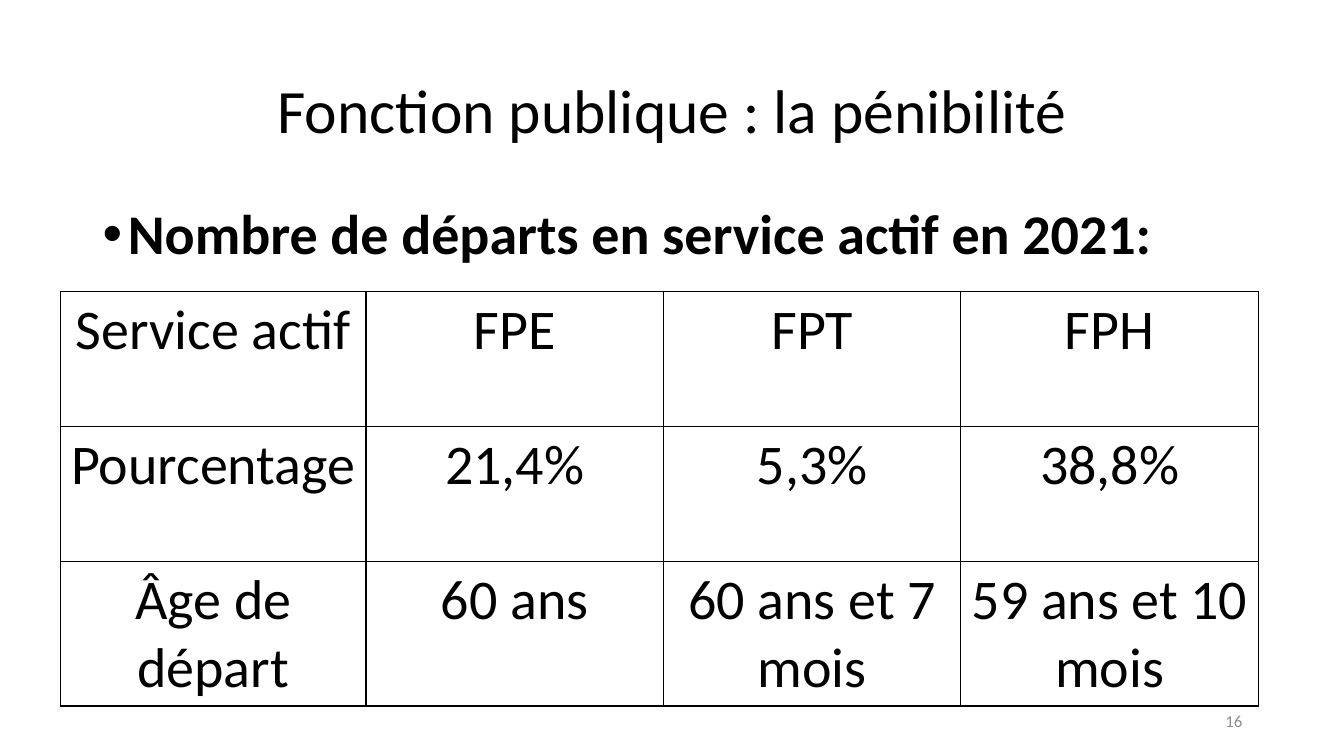
from lxml import etree
from pptx import Presentation, util as u
from pptx.dml import color
from pptx.enum import text as t
from pptx.oxml import ns

ROWS = [
    ["Service actif", "FPE", "FPT", "FPH"],
    ["Pourcentage", "21,4%", "5,3%", "38,8%"],
    ["Âge de départ", "60 ans", "60 ans et 7 mois", "59 ans et 10 mois"],
]
COLS = [3.03, 2.95, 2.95, 2.95]
TALL = 1.34


def tint(code):
    return color.RGBColor.from_string(code)


def write(frame, words, size, align, shade="000000", bold=False, **form):
    frame.word_wrap = True
    para = frame.paragraphs[0]
    for key, value in {"alignment": align, **form}.items():
        setattr(para, key, value)
    run = para.add_run()
    run.text = words
    for key, value in {"name": "Calibri", "size": u.Pt(size), "bold": bold}.items():
        setattr(run.font, key, value)
    run.font.color.rgb = tint(shade)
    return para


def add_box(slide, box, anchor):
    frame = slide.shapes.add_textbox(*map(u.Inches, box)).text_frame
    frame.vertical_anchor = anchor
    return frame


def add_title(slide, box):
    frame = add_box(slide, box, t.MSO_ANCHOR.MIDDLE)
    write(frame, "Fonction publique : la pénibilité", 44, t.PP_ALIGN.CENTER,
          line_spacing=0.9)


def add_point(slide, box):
    frame = add_box(slide, box, t.MSO_ANCHOR.TOP)
    para = write(frame, "Nombre de départs en service actif en 2021:", 40,
                 t.PP_ALIGN.LEFT, bold=True, line_spacing=0.9,
                 space_before=u.Pt(10))
    props = para._p.get_or_add_pPr()
    props.set("marL", str(u.Inches(0.25)))
    props.set("indent", str(-u.Inches(0.25)))
    etree.SubElement(props, ns.qn("a:buFont")).set("typeface", "Arial")
    etree.SubElement(props, ns.qn("a:buChar")).set("char", "•")


def add_edges(cell):
    props = cell._tc.get_or_add_tcPr()
    for spot, side in enumerate(("lnL", "lnR", "lnT", "lnB")):
        line = etree.Element(ns.qn("a:" + side), w=str(u.Pt(1)))
        fill = etree.SubElement(line, ns.qn("a:solidFill"))
        etree.SubElement(fill, ns.qn("a:srgbClr")).set("val", "000000")
        props.insert(spot, line)


def add_grid(slide, left, top):
    size = map(u.Inches, (left, top, sum(COLS), TALL * len(ROWS)))
    grid = slide.shapes.add_table(len(ROWS), len(COLS), *size).table
    grid.first_row = grid.horz_banding = False
    for col, wide in zip(grid.columns, COLS):
        col.width = u.Inches(wide)
    for row, items in zip(grid.rows, ROWS):
        row.height = u.Inches(TALL)
        for cell, words in zip(row.cells, items):
            cell.margin_left = cell.margin_right = u.Inches(0.08)
            cell.fill.background()
            add_edges(cell)
            write(cell.text_frame, words, 40, t.PP_ALIGN.CENTER)


def add_page(slide, box):
    frame = add_box(slide, box, t.MSO_ANCHOR.MIDDLE)
    write(frame, "16", 12, t.PP_ALIGN.RIGHT, "8C8C8C")


def main():
    deck = Presentation()
    deck.slide_width, deck.slide_height = u.Inches(13.33), u.Inches(7.5)
    slide = deck.slides.add_slide(deck.slide_layouts[6])
    add_title(slide, (0.92, 0.4, 11.5, 1.45))
    add_point(slide, (0.92, 2, 11.5, 4.76))
    add_grid(slide, 0.6, 2.89)
    add_page(slide, (9.42, 6.95, 3, 0.4))
    deck.save("out.pptx")


if __name__ == "__main__":
    main()
